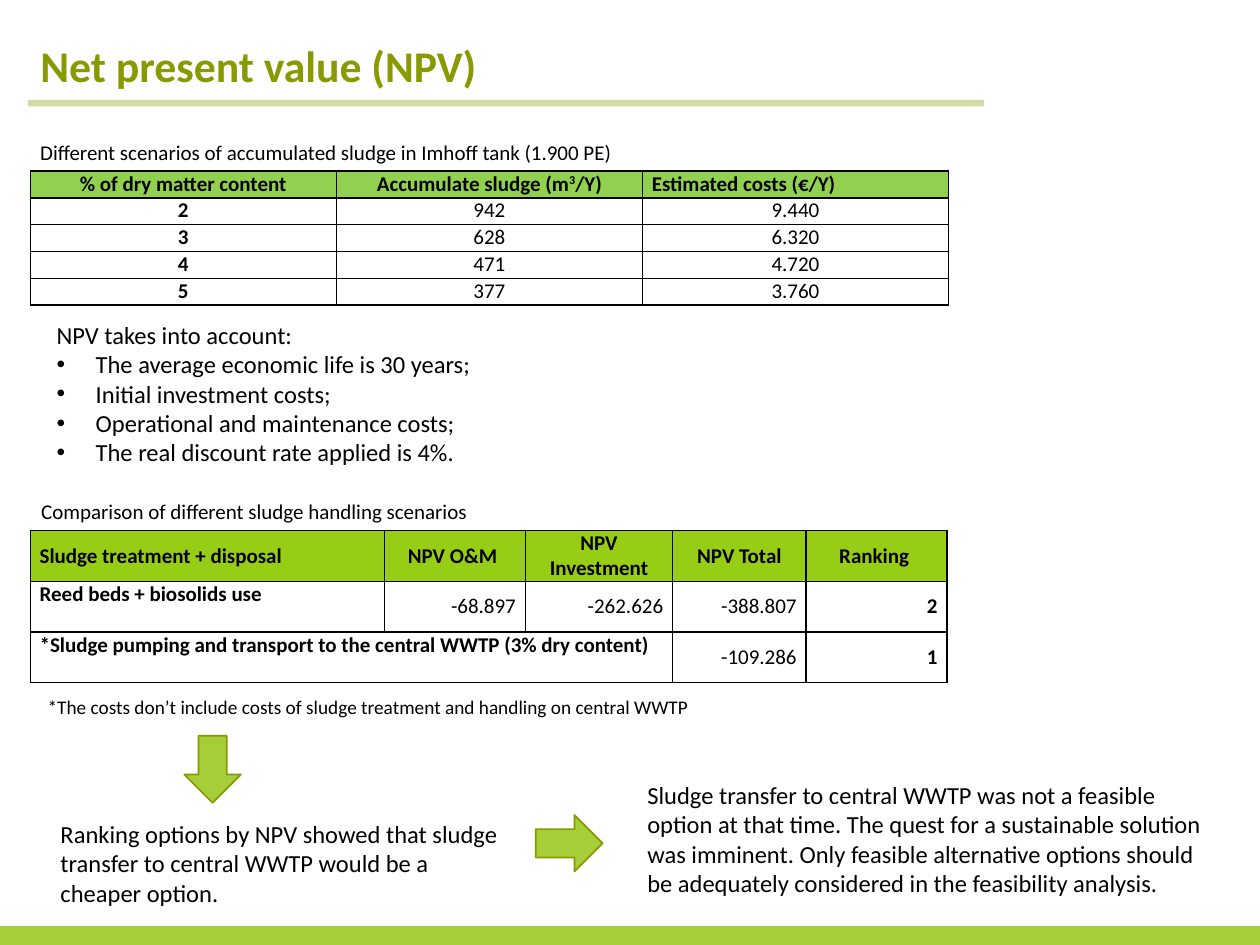
from dataclasses import dataclass

import pptx
import pptx.dml.color
import pptx.enum.shapes
import pptx.enum.text
import pptx.oxml
import pptx.oxml.ns
import pptx.util
from lxml import etree

Cm = pptx.util.Cm
Pt = pptx.util.Pt
Align = pptx.enum.text.PP_ALIGN
Anchor = pptx.enum.text.MSO_ANCHOR
AutoSize = pptx.enum.text.MSO_AUTO_SIZE
Preset = pptx.enum.shapes.MSO_SHAPE
qn = pptx.oxml.ns.qn

BLACK, WHITE, OLIVE, LIME = "000000", "FFFFFF", "889A00", "A6CE39"


@dataclass
class Note:
    left: float
    top: float
    width: float
    height: float
    size: float
    lines: list[str]
    bullets: bool = False


@dataclass
class Arrow:
    left: float
    top: float
    rotation: float = 0


@dataclass
class Entry:
    text: str
    align: Align = Align.CENTER
    bold: bool = False
    fill: str | None = None
    anchor: Anchor = Anchor.TOP
    span: int = 1


@dataclass
class Grid:
    top: float
    columns: list[float]
    row_height: float
    rows: list[list[Entry]]


def colour(value: str) -> pptx.dml.color.RGBColor:
    return pptx.dml.color.RGBColor.from_string(value)


def write(para, text: str, *, size: float = 12, color: str = BLACK, bold: bool = False, raised: bool = False):
    span = para.add_run()
    span.text = text
    span.font.name = "Calibri"
    span.font.size = Pt(size)
    span.font.bold = bold
    span.font.color.rgb = colour(color)
    if raised:
        span.font._element.set("baseline", "30000")


def add_bullet(para) -> None:
    properties = para._p.get_or_add_pPr()
    properties.set("marL", str(Cm(0.79)))
    properties.set("indent", str(-Cm(0.79)))
    etree.SubElement(properties, qn("a:buFont")).set("typeface", "Arial")
    etree.SubElement(properties, qn("a:buChar")).set("char", "•")


def add_note(page, note: Note) -> None:
    box = page.shapes.add_textbox(Cm(note.left), Cm(note.top), Cm(note.width), Cm(note.height))
    frame = box.text_frame
    frame.word_wrap = True
    frame.auto_size = AutoSize.SHAPE_TO_FIT_TEXT
    for index, line in enumerate(note.lines):
        para = frame.add_paragraph() if index else frame.paragraphs[0]
        if note.bullets and index:
            add_bullet(para)
        write(para, line, size=note.size)


def add_block(page, preset: Preset, left: float, top: float, width: float, height: float):
    shape = page.shapes.add_shape(preset, Cm(left), Cm(top), Cm(width), Cm(height))
    shape.shadow.inherit = False
    shape.fill.solid()
    shape.fill.fore_color.rgb = colour(LIME)
    shape.line.fill.background()
    return shape


def add_arrow(page, arrow: Arrow) -> None:
    shape = add_block(page, Preset.RIGHT_ARROW, arrow.left, arrow.top, 1.35, 1.14)
    shape.rotation = arrow.rotation
    shape.line.color.rgb = colour(OLIVE)
    shape.line.width = Pt(1)


def add_rule(page) -> None:
    straight = pptx.enum.shapes.MSO_CONNECTOR.STRAIGHT
    rule = page.shapes.add_connector(straight, Cm(0.56), Cm(2.08), Cm(19.84), Cm(2.08))
    rule.line.color.rgb = colour(OLIVE)
    rule.line.width = Pt(3.75)
    tint = rule._element.spPr.find(".//" + qn("a:srgbClr"))
    etree.SubElement(tint, qn("a:alpha")).set("val", "35000")
    etree.SubElement(rule._element.spPr, qn("a:effectLst"))


def format_cell(cell, fill: str | None) -> None:
    cell.margin_left = cell.margin_right = Cm(0.19)
    cell.margin_top = cell.margin_bottom = 0
    properties = cell._tc.get_or_add_tcPr()
    for side in ("a:lnL", "a:lnR", "a:lnT", "a:lnB"):
        border = etree.SubElement(properties, qn(side), w=str(Pt(1)))
        ink = etree.SubElement(border, qn("a:solidFill"))
        etree.SubElement(ink, qn("a:srgbClr")).set("val", BLACK)
    if fill:
        cell.fill.solid()
        cell.fill.fore_color.rgb = colour(fill)
    else:
        cell.fill.background()


def add_grid(page, grid: Grid) -> None:
    count = len(grid.rows)
    table = page.shapes.add_table(
        count, len(grid.columns), Cm(0.61), Cm(grid.top), Cm(sum(grid.columns)), Cm(count * grid.row_height)
    ).table
    table.first_row = table.horz_banding = False
    for column, width in zip(table.columns, grid.columns):
        column.width = Cm(width)
    for row_index, entries in enumerate(grid.rows):
        table.rows[row_index].height = Cm(grid.row_height)
        position = 0
        for entry in entries:
            cell = table.cell(row_index, position)
            for offset in range(entry.span):
                format_cell(table.cell(row_index, position + offset), entry.fill)
            if entry.span > 1:
                cell.merge(table.cell(row_index, position + entry.span - 1))
            cell.vertical_anchor = entry.anchor
            para = cell.text_frame.paragraphs[0]
            para.alignment = entry.align
            for part_index, part in enumerate(entry.text.split("^")):
                write(para, part, bold=entry.bold, raised=part_index == 1)
            position += entry.span


def sludge_header(text: str, align: Align = Align.CENTER) -> Entry:
    return Entry(text, align, True, "92D050")


def npv_header(text: str, align: Align = Align.CENTER) -> Entry:
    return Entry(text, align, True, "98CD15", Anchor.MIDDLE)


def scenario(text: str, span: int = 1) -> Entry:
    return Entry(text, Align.LEFT, True, span=span)


def figure(text: str, bold: bool = False) -> Entry:
    return Entry(text, Align.RIGHT, bold, WHITE, Anchor.MIDDLE)


SLUDGE = [("2", "942", "9.440"), ("3", "628", "6.320"), ("4", "471", "4.720"), ("5", "377", "3.760")]
GRIDS = [
    Grid(3.45, [6.17] * 3, 0.54, [
        [sludge_header("% of dry matter content"), sludge_header("Accumulate sludge (m^3^/Y)"),
         sludge_header("Estimated costs (€/Y)", Align.JUSTIFY)],
        *[[Entry(content, bold=True), Entry(volume), Entry(cost)] for content, volume, cost in SLUDGE],
    ]),
    Grid(10.69, [7.14, 2.84, 2.97, 2.69, 2.84], 1.02, [
        [npv_header("Sludge treatment + disposal", Align.LEFT),
         *map(npv_header, ["NPV O&M ", "NPV Investment", "NPV Total", "Ranking "])],
        [scenario("Reed beds + biosolids use"), *map(figure, ["-68.897", "-262.626", "-388.807"]), figure("2", True)],
        [scenario("*Sludge pumping and transport to the central WWTP (3% dry content)", 3),
         figure("-109.286"), figure("1", True)],
    ]),
]
NOTES = [
    Note(0.56, 2.69, 15.95, 0.76, 12, ["Different scenarios of accumulated sludge in Imhoff tank (1.900 PE)"]),
    Note(0.89, 6.32, 11.99, 3.25, 14, [
        "NPV takes into account:", "The average economic life is 30 years;", "Initial investment costs;",
        "Operational and maintenance costs;", "The real discount rate applied is 4%."], bullets=True),
    Note(0.58, 9.93, 11.15, 0.76, 12, ["Comparison of different sludge handling scenarios"]),
    Note(0.71, 13.89, 14.76, 0.74, 11, [
        "*The costs don’t include costs of sludge treatment and handling on central WWTP"]),
    Note(0.97, 16.38, 9.4, 2.06, 14, [
        "Ranking options by NPV showed that sludge transfer to central WWTP would be a cheaper option."]),
    Note(12.8, 15.6, 11.99, 3.25, 14, [
        "Sludge transfer to central WWTP was not a feasible option at that time. The quest for a sustainable "
        "solution was imminent. Only feasible alternative options should be adequately considered in the "
        "feasibility analysis."]),
]
ARROWS = [Arrow(3.61, 14.94, 90), Arrow(10.8, 16.43)]


def main() -> None:
    deck = pptx.Presentation()
    deck.slide_width, deck.slide_height = Cm(25.4), Cm(19.05)
    page = deck.slides.add_slide(deck.slide_layouts[5])
    add_block(page, Preset.RECTANGLE, 0, 18.67, 25.4, 0.38)
    title = page.shapes.title
    title.left, title.top, title.width, title.height = Cm(0.56), Cm(1.19), Cm(20.55), Cm(0.84)
    title.text_frame.auto_size = AutoSize.NONE
    title.text_frame.vertical_anchor = Anchor.MIDDLE
    heading = title.text_frame.paragraphs[0]
    heading.alignment = Align.LEFT
    heading.line_spacing = Pt(13)
    write(heading, "Net present value (NPV)", size=25, color=OLIVE, bold=True)
    add_rule(page)
    for grid in GRIDS:
        add_grid(page, grid)
    for note in NOTES:
        add_note(page, note)
    for arrow in ARROWS:
        add_arrow(page, arrow)
    deck.save("out.pptx")


if __name__ == "__main__":
    main()
